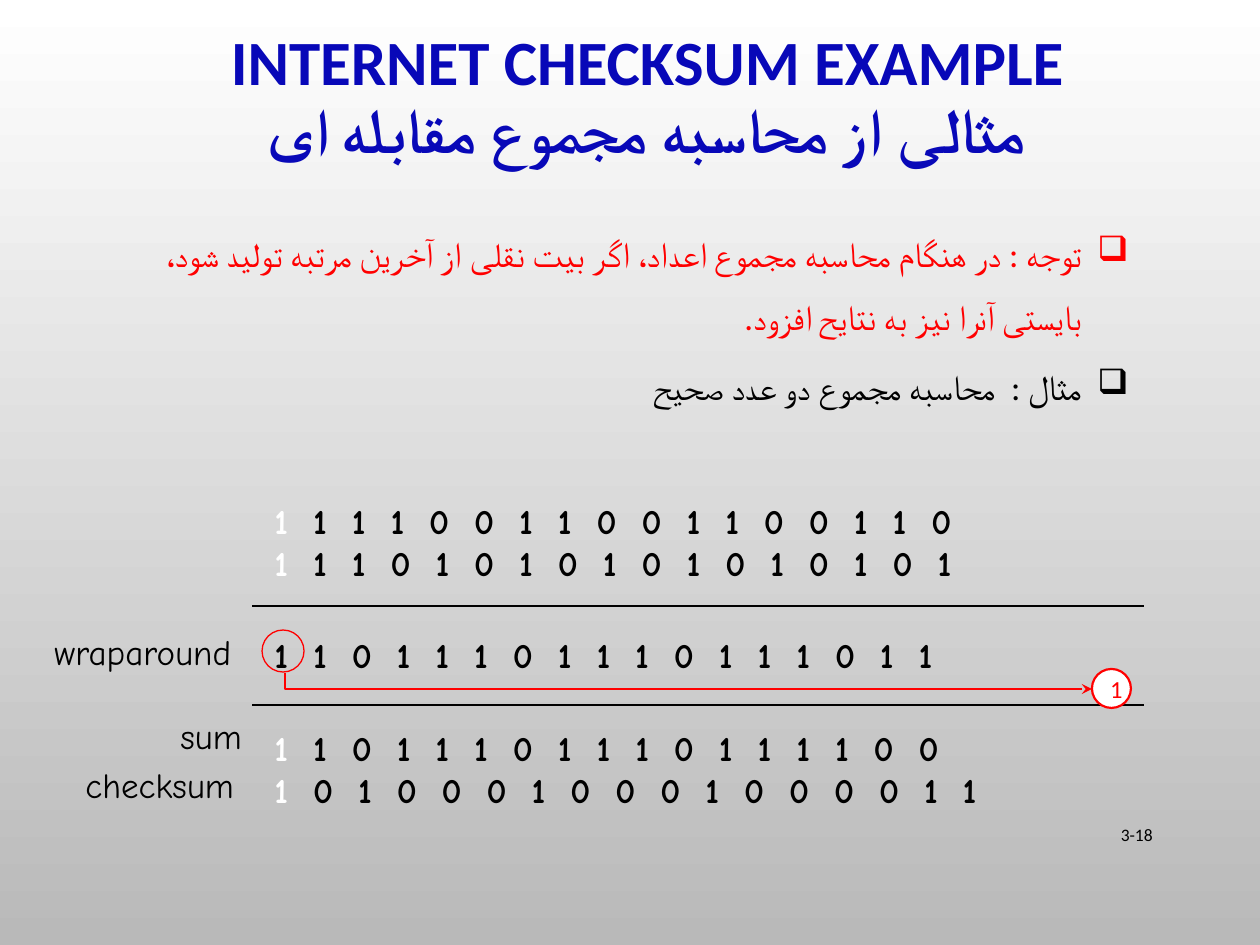
import pptx
import pptx.dml.color
import pptx.enum.dml
import pptx.enum.shapes
import pptx.enum.text
import pptx.oxml.ns
import pptx.util
from lxml import etree

EMU_PER_PX = 914400 / 126
COLORS = {"white": "FFFFFF", "gray": "B9B9B9", "blue": "0808B8",
          "red": "FF0000", "black": "000000"}
ALIGN = pptx.enum.text.PP_ALIGN
MIDDLE = pptx.enum.text.MSO_ANCHOR.MIDDLE
DIGIT_ROWS = [
    ("white", "11110011001100110", 0),
    ("white", "11101010101010101", 0),
    ("black", "11011101110111011", 29),
    ("white", "11011101110111100", 29),
    ("white", "10100010001000011", 0),
]
LABELS = [("wraparound", 42, 624, 213), ("sum", 168, 708, 88),
          ("checksum", 73, 757, 181)]


def px(value):
    return pptx.util.Emu(round(value * EMU_PER_PX))


def rgb(name):
    return pptx.dml.color.RGBColor.from_string(COLORS[name])


def add_child(parent, tag, **attributes):
    return etree.SubElement(parent, pptx.oxml.ns.qn(tag), attributes)


def paint_background(page):
    fill = page.background.fill
    fill.gradient()
    fill.gradient_angle = 270
    for stop, name in zip(fill.gradient_stops, ("white", "gray")):
        stop.color.rgb = rgb(name)


def add_box(page, left, top, width, height, wrap=True, anchor=None):
    box = page.shapes.add_textbox(px(left), px(top), px(width), px(height))
    frame = box.text_frame
    frame.word_wrap = wrap
    if anchor is not None:
        frame.vertical_anchor = anchor
    return frame


def add_span(para, text, size, color, font="Calibri", bold=False):
    span = para.add_run()
    span.text = text
    span.font.size = pptx.util.Pt(size)
    span.font.name = font
    span.font.bold = bold
    span.font.color.rgb = rgb(color)
    add_child(span.font._element, "a:cs", typeface=font)


def next_para(frame, index):
    return frame.add_paragraph() if index else frame.paragraphs[0]


def set_right_to_left(para):
    properties = para._p.get_or_add_pPr()
    properties.set("rtl", "1")
    return properties


def add_title(page):
    para = add_box(page, 73, 20, 1149, 158, anchor=MIDDLE).paragraphs[0]
    para.alignment = ALIGN.CENTER
    para.line_spacing = 0.9
    set_right_to_left(para)
    add_span(para, "INTERNET CHECKSUM EXAMPLE", 36, "blue", bold=True)
    para.add_line_break()
    add_span(para, "مثالی از محاسبه مجموع مقابله ای", 36, "blue", bold=True)


def add_notice(page):
    frame = add_box(page, 137, 205, 1004, 212)
    items = [
        ("توجه : در هنگام محاسبه مجموع اعداد، اگر بیت نقلی از آخرین مرتبه "
         "تولید شود، بایستی آنرا نیز به نتایح افزود.", "red"),
        ("مثال :  محاسبه مجموع دو عدد صحیح ", "black"),
    ]
    for index, (text, color) in enumerate(items):
        para = next_para(frame, index)
        para.alignment = ALIGN.RIGHT
        para.line_spacing = 1.5
        if index:
            para.space_before = pptx.util.Pt(4)
        properties = set_right_to_left(para)
        properties.set("marL", str(px(47)))
        properties.set("indent", str(px(-47)))
        add_child(properties, "a:buChar", char="❑")
        add_span(para, text, 20, color)


def add_digits(page):
    frame = add_box(page, 262, 493, 882, 326)
    for index, (carry_color, bits, gap) in enumerate(DIGIT_ROWS):
        para = next_para(frame, index)
        if gap:
            para.space_before = pptx.util.Pt(gap)
        add_span(para, bits[0], 20, carry_color, "Comic Neue", True)
        rest = "".join("  " + bit for bit in bits[1:])
        add_span(para, rest, 20, "black", "Comic Neue", True)


def add_label(page, text, left, top, width):
    frame = add_box(page, left, top, width, 54, wrap=False)
    add_span(frame.paragraphs[0], text, 20, "black", "Comic Neue")


def add_rule(page, y):
    rule = page.shapes.add_connector(
        pptx.enum.shapes.MSO_CONNECTOR.STRAIGHT, px(1144), px(y), px(252), px(y))
    rule.line.color.rgb = rgb("black")
    rule.line.width = pptx.util.Pt(1)
    add_child(rule._element.spPr, "a:effectLst")


def outline_red(shape, width, fill=None):
    shape.shadow.inherit = False
    if fill:
        shape.fill.solid()
        shape.fill.fore_color.rgb = rgb(fill)
    else:
        shape.fill.background()
    shape.line.color.rgb = rgb("red")
    shape.line.width = pptx.util.Pt(width)


def add_circle(page, left, top, size, width, fill=None):
    circle = page.shapes.add_shape(
        pptx.enum.shapes.MSO_SHAPE.OVAL, px(left), px(top), px(size), px(size))
    outline_red(circle, width, fill)
    return circle


def add_carry_arrow(page):
    builder = page.shapes.build_freeform(285, 673, scale=EMU_PER_PX)
    builder.add_line_segments([(285, 689), (1092, 689)], close=False)
    arrow = builder.convert_to_shape()
    outline_red(arrow, 0.75)
    line = arrow._element.spPr.find(pptx.oxml.ns.qn("a:ln"))
    add_child(line, "a:tailEnd", type="stealth")


def add_carry_bit(page):
    frame = add_circle(page, 1092, 669, 39, 1.25, "white").text_frame
    frame.vertical_anchor = MIDDLE
    para = frame.paragraphs[0]
    para.alignment = ALIGN.CENTER
    add_span(para, "1", 14, "red")


def add_page_number(page):
    para = add_box(page, 1086, 810, 79, 50, anchor=MIDDLE).paragraphs[0]
    para.alignment = ALIGN.RIGHT
    add_span(para, "3-18", 10, "black")


def main():
    deck = pptx.Presentation()
    deck.slide_width, deck.slide_height = px(1260), px(945)
    page = deck.slides.add_slide(deck.slide_layouts[6])
    paint_background(page)
    add_title(page)
    add_page_number(page)
    add_notice(page)
    add_digits(page)
    add_rule(page, 606)
    add_circle(page, 262, 630, 42, 0.75)
    for label in LABELS:
        add_label(page, *label)
    add_rule(page, 705)
    add_carry_arrow(page)
    add_carry_bit(page)
    deck.save("out.pptx")


if __name__ == "__main__":
    main()
